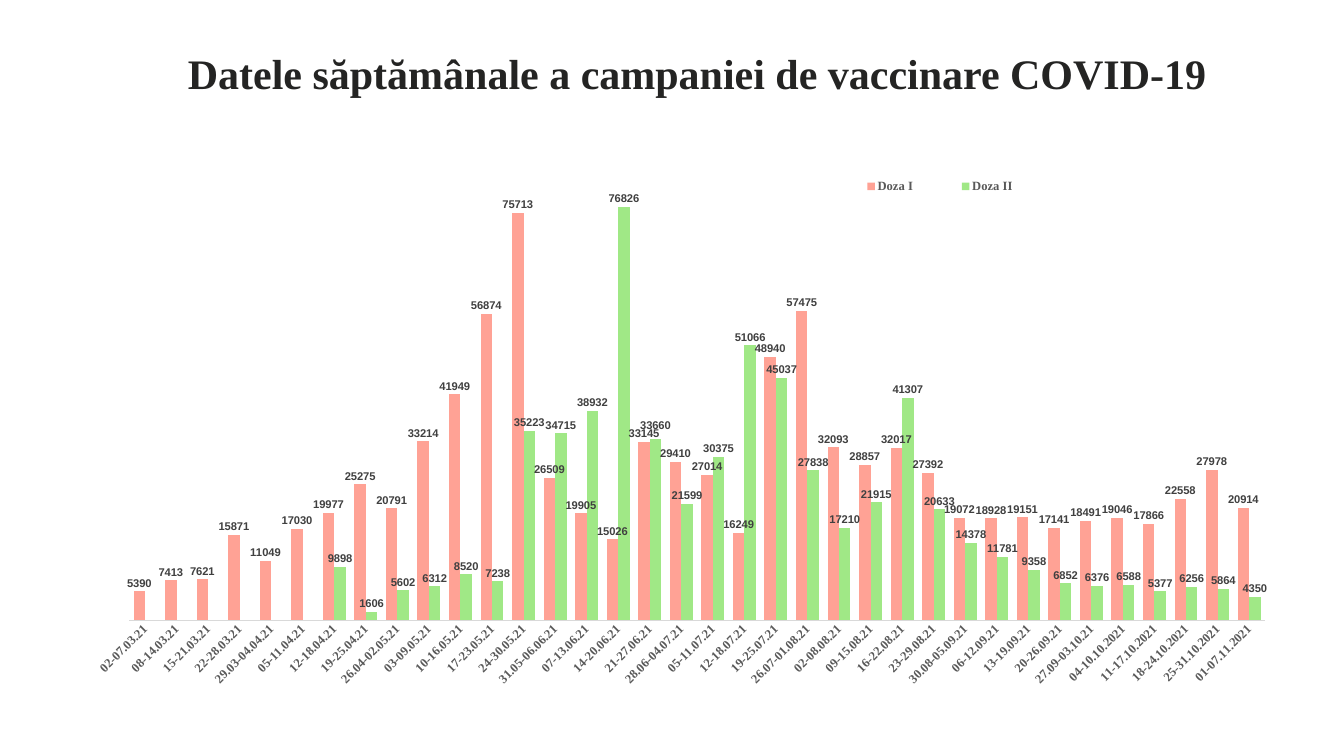
"""Build the slide with the weekly first and second doses of the vaccination campaign."""
from lxml import etree
from pptx import Presentation
from pptx.chart.data import CategoryChartData as ChartData
from pptx.dml.color import RGBColor as RGB
from pptx.enum.chart import XL_CHART_TYPE as Kind, XL_LABEL_POSITION as Spot
from pptx.enum.chart import XL_LEGEND_POSITION as Side, XL_TICK_MARK as Tick
from pptx.enum.text import MSO_ANCHOR as Anchor, MSO_AUTO_SIZE as Fit, PP_ALIGN as Align
from pptx.oxml.ns import qn
from pptx.util import Cm, Pt

HUES = {"title": "242423", "first": "FFA295", "second": "A0E886",
        "label": "404040", "axis": "595959", "line": "D9D9D9"}
SERIF, SANS = "Times New Roman", "Arial"

WEEKS = """02-07.03.21 08-14.03.21 15-21.03.21 22-28.03.21 29.03-04.04.21 05-11.04.21
12-18.04.21 19-25.04.21 26.04-02.05.21 03-09.05.21 10-16.05.21 17-23.05.21
24-30.05.21 31.05-06.06.21 07-13.06.21 14-20.06.21 21-27.06.21 28.06-04.07.21
05-11.07.21 12-18.07.21 19-25.07.21 26.07-01.08.21 02-08.08.21 09-15.08.21
16-22.08.21 23-29.08.21 30.08-05.09.21 06-12.09.21 13-19.09.21 20-26.09.21
27.09-03.10.21 04-10.10.2021 11-17.10.2021 18-24.10.2021 25-31.10.2021
01-07.11.2021""".split()
FIRST = [5390, 7413, 7621, 15871, 11049, 17030, 19977, 25275, 20791, 33214, 41949, 56874,
         75713, 26509, 19905, 15026, 33145, 29410, 27014, 16249, 48940, 57475, 32093, 28857,
         32017, 27392, 19072, 18928, 19151, 17141, 18491, 19046, 17866, 22558, 27978, 20914]
SECOND = [None] * 6 + [
    9898, 1606, 5602, 6312, 8520, 7238, 35223, 34715, 38932, 76826, 33660, 21599, 30375, 51066,
    45037, 27838, 17210, 21915, 41307, 20633, 14378, 11781, 9358, 6852, 6376, 6588, 5377, 6256,
    5864, 4350]


def style(font, face, size, hue):
    font.name, font.size, font.bold = face, Pt(size), True
    font.color.rgb = RGB.from_string(HUES[hue])


def place(node, index, **parts):
    for old in node.findall(qn("c:layout")):
        node.remove(old)
    layout = etree.Element(qn("c:layout"))
    manual = etree.SubElement(layout, qn("c:manualLayout"))
    for tag, value in parts.items():
        etree.SubElement(manual, qn(f"c:{tag}")).set("val", str(value))
    node.insert(index, layout)


deck = Presentation()
deck.slide_width, deck.slide_height = Cm(67.74), Cm(38.1)
slide = deck.slides.add_slide(deck.slide_layouts[5])

title = slide.shapes.title
title.left, title.top, title.width, title.height = Cm(4.8), Cm(2.13), Cm(60.68), Cm(5.69)
frame = title.text_frame
frame.margin_left = frame.margin_top = frame.margin_right = frame.margin_bottom = 0
frame.word_wrap, frame.auto_size, frame.vertical_anchor = True, Fit.NONE, Anchor.TOP
para = frame.paragraphs[0]
para.alignment, para.line_spacing = Align.CENTER, Pt(80)
run = para.add_run()
run.text = "Datele săptămânale a campaniei de vaccinare COVID-19"
style(run.font, SERIF, 60, "title")

data = ChartData()
data.categories = WEEKS
data.add_series("Doza I", FIRST)
data.add_series("Doza II", SECOND)
chart = slide.shapes.add_chart(Kind.COLUMN_CLUSTERED, Cm(4.8), Cm(6.6),
                               Cm(59.13), Cm(29.36), data).chart
chart.has_title = False
chart.font.name, chart.font.size = SANS, Pt(10)
plot = chart.plots[0]
plot.gap_width, plot.overlap, plot.vary_by_categories = 75, 0, False

for series, hue in zip(plot.series, ("first", "second")):
    series.format.fill.solid()
    series.format.fill.fore_color.rgb = RGB.from_string(HUES[hue])
    labels = series.data_labels
    labels.show_value, labels.position = True, Spot.OUTSIDE_END
    style(labels.font, SANS, 16, "label")

raised = plot.series[1].points[16].data_label
raised.position = Spot.OUTSIDE_END
style(raised.font, SANS, 16, "label")

weeks, doses = chart.category_axis, chart.value_axis
weeks.major_tick_mark = weeks.minor_tick_mark = Tick.NONE
weeks.format.line.color.rgb = RGB.from_string(HUES["line"])
weeks.format.line.width = Pt(0.75)
style(weeks.tick_labels.font, SERIF, 18, "axis")
doses.minimum_scale, doses.maximum_scale = 0, 90000
doses.has_major_gridlines = doses.visible = False

chart.has_legend = True
legend = chart.legend
legend.position, legend.include_in_layout = Side.BOTTOM, False
style(legend.font, SERIF, 18, "axis")

root = chart.element
root.xpath(".//c:catAx/c:txPr/a:bodyPr")[0].set("rot", "-2700000")
place(root.xpath(".//c:plotArea")[0], 0, layoutTarget="inner", xMode="edge", yMode="edge",
      x=0.029, y=0.008, w=0.968, h=0.832)
place(root.xpath(".//c:legend")[0], 1, xMode="edge", yMode="edge", x=0.62, y=0.08, w=0.2, h=0.03)
place(root.xpath(".//c:dLbl")[0], 1, x=0, y=-0.01)

deck.save("out.pptx")
